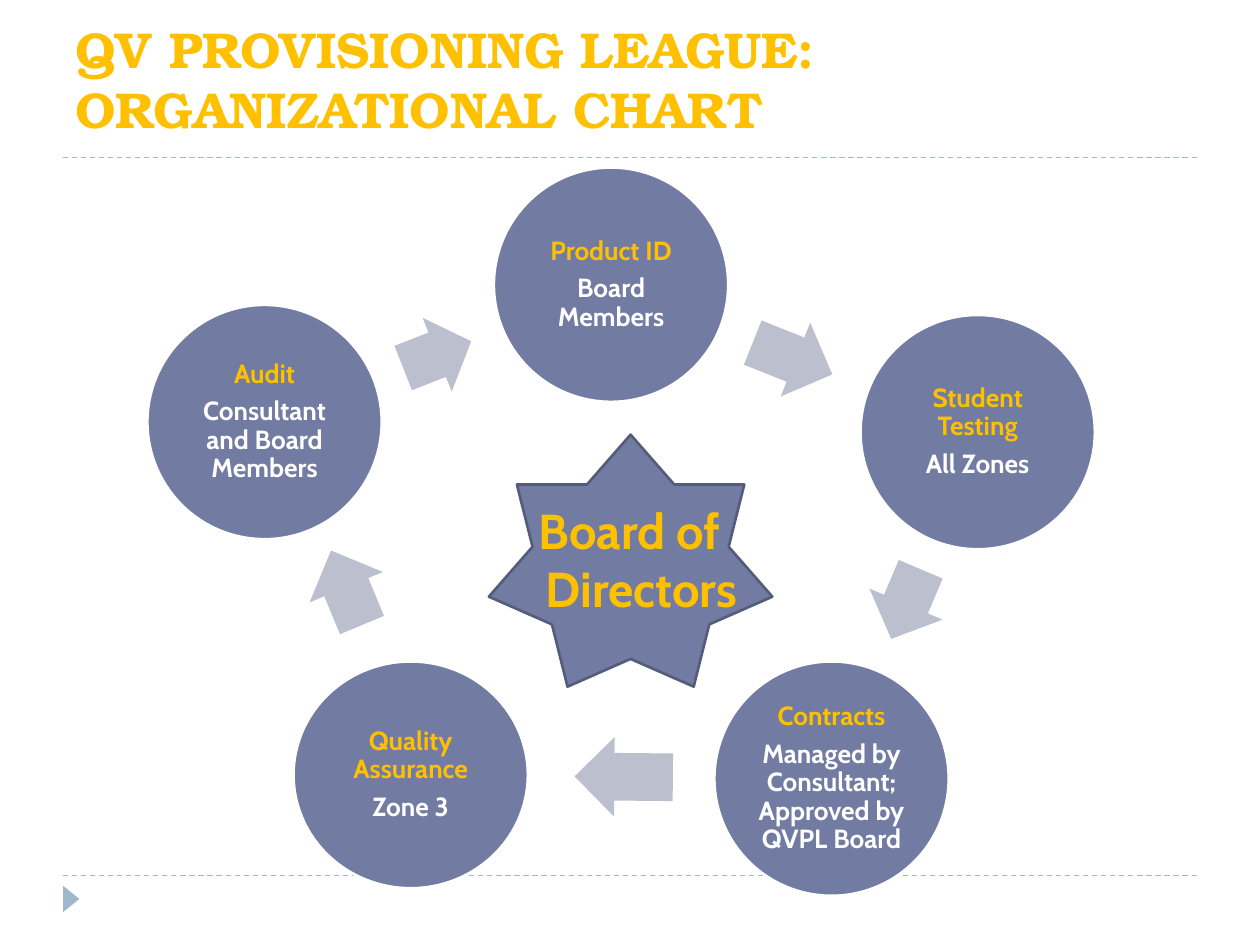
from dataclasses import dataclass

from lxml.etree import SubElement
from pptx import Presentation
from pptx.dml.color import RGBColor
from pptx.enum.dml import MSO_LINE
from pptx.enum.shapes import MSO_CONNECTOR, MSO_SHAPE
from pptx.enum.text import MSO_ANCHOR, PP_ALIGN
from pptx.oxml.ns import qn
from pptx.util import Inches, Pt


@dataclass(frozen=True)
class Theme:
    """Colours, fonts and type sizes of the slide."""
    gold: str = "FFC000"
    white: str = "FFFFFF"
    circle: str = "727CA3"
    star_edge: str = "545C79"
    arrow: str = "BCBFCE"
    rule: str = "9FB8CD"
    title_font: str = "TeX Gyre Bonum"
    body_font: str = "Cabin"
    title_size: float = 28.8
    center_size: float = 28
    circle_size: float = 15
    outline: float = 1.5
    hairline: float = 0.75


THEME = Theme()

CIRCLES = [
    ("Product ID", "Board Members", 3.92, 1.33, 1.86),
    ("Student Testing", "All Zones", 6.83, 2.5, 1.86),
    ("Contracts", "Managed by Consultant; Approved by QVPL Board", 5.67, 5.25, 1.86),
    ("Quality Assurance", "Zone 3", 2.33, 5.25, 1.8),
    ("Audit", "Consultant and Board Members", 1.17, 2.42, 1.86),
]
CIRCLE_WIDTH = 1.86

ARROWS = [
    (5.95, 2.53, 0.68, 21.8),
    (6.89, 4.48, 0.6, 113),
    (4.56, 5.85, 0.78, 180.5),
    (2.43, 4.35, 0.64, 247.4),
    (3.18, 2.5, 0.58, 338.5),
]
ARROW_HEIGHT = 0.63


def add_rule(page, top):
    """Draw a dashed rule across the page."""
    rule = page.shapes.add_connector(
        MSO_CONNECTOR.STRAIGHT, Inches(0.5), Inches(top), Inches(9.5), Inches(top))
    rule.line.color.rgb = RGBColor.from_string(THEME.rule)
    rule.line.width = Pt(THEME.hairline)
    rule.line.dash_style = MSO_LINE.DASH
    SubElement(rule._element.spPr, qn("a:effectLst"))


def add_figure(page, kind, left, top, width, height, fill, edge=None, rotation=0):
    """Add a filled preset shape with an optional outline."""
    figure = page.shapes.add_shape(
        kind, Inches(left), Inches(top), Inches(width), Inches(height))
    figure.shadow.inherit = False
    figure.rotation = rotation
    figure.fill.solid()
    figure.fill.fore_color.rgb = RGBColor.from_string(fill)
    if edge:
        figure.line.color.rgb = RGBColor.from_string(edge)
        figure.line.width = Pt(THEME.outline)
    else:
        figure.line.fill.background()
    return figure


def add_box(page, left, top, width, height, anchor=MSO_ANCHOR.TOP):
    """Add a wrapping text box and return its text frame."""
    box = page.shapes.add_textbox(
        Inches(left), Inches(top), Inches(width), Inches(height))
    box.text_frame.word_wrap = True
    box.text_frame.vertical_anchor = anchor
    return box.text_frame


def write(frame, text, size, color=THEME.gold, font=THEME.body_font,
          align=PP_ALIGN.CENTER, spacing=None, after=None, indent=0):
    """Write one bold paragraph, filling the first one while it is empty."""
    first = frame.paragraphs[0]
    para = frame.add_paragraph() if first.runs else first
    para.alignment = align
    para.line_spacing = spacing
    if after is not None:
        para.space_after = Pt(after)
    if indent:
        para._p.get_or_add_pPr().set("marL", str(Inches(indent)))
    span = para.add_run()
    span.text = text
    span.font.size = Pt(size)
    span.font.name = font
    span.font.bold = True
    span.font.color.rgb = RGBColor.from_string(color)


def add_circle(page, heading, detail, left, top, height):
    """Add a circle holding a task and the people in charge of it."""
    circle = add_figure(page, MSO_SHAPE.OVAL, left, top, CIRCLE_WIDTH, height,
                        THEME.circle, THEME.white)
    frame = circle.text_frame
    frame.word_wrap = True
    frame.vertical_anchor = MSO_ANCHOR.MIDDLE
    frame.margin_left = frame.margin_right = Inches(0.02)
    frame.margin_top = frame.margin_bottom = Inches(0.02)
    for text, color in ((heading, THEME.gold), (detail, THEME.white)):
        write(frame, text, THEME.circle_size, color=color, spacing=0.9,
              after=0.35 * THEME.circle_size)


def add_arrow(page, left, top, width, rotation):
    """Add a block arrow pointing to the next circle."""
    arrow = add_figure(page, MSO_SHAPE.RIGHT_ARROW, left, top, width, ARROW_HEIGHT,
                       THEME.arrow, rotation=rotation)
    arrow.adjustments[0] = 0.6
    arrow.adjustments[1] = 0.5


def main():
    """Build the organizational chart slide and save it."""
    deck = Presentation()
    deck.slide_width, deck.slide_height = Inches(10), Inches(7.5)
    page = deck.slides.add_slide(deck.slide_layouts[6])

    for top in (6.95, 1.25):
        add_rule(page, top)
    add_figure(page, MSO_SHAPE.ISOSCELES_TRIANGLE, 0.46, 7.07, 0.21, 0.13,
               THEME.rule, rotation=90)

    for circle, arrow in zip(CIRCLES, ARROWS):
        add_circle(page, *circle)
        add_arrow(page, *arrow)

    add_figure(page, MSO_SHAPE.STAR_7_POINT, 3.88, 3.45, 2.25, 2,
               THEME.circle, THEME.star_edge)

    title = add_box(page, 0.5, 0.17, 9, 0.98, anchor=MSO_ANCHOR.BOTTOM)
    write(title, "QV PROVISIONING LEAGUE: ORGANIZATIONAL CHART", THEME.title_size,
          font=THEME.title_font, align=PP_ALIGN.LEFT)

    center = add_box(page, 3.62, 3.92, 2.75, 1.99)
    write(center, "Board of", THEME.center_size)
    write(center, "Directors", THEME.center_size, indent=0.19)

    deck.save("out.pptx")


if __name__ == "__main__":
    main()
